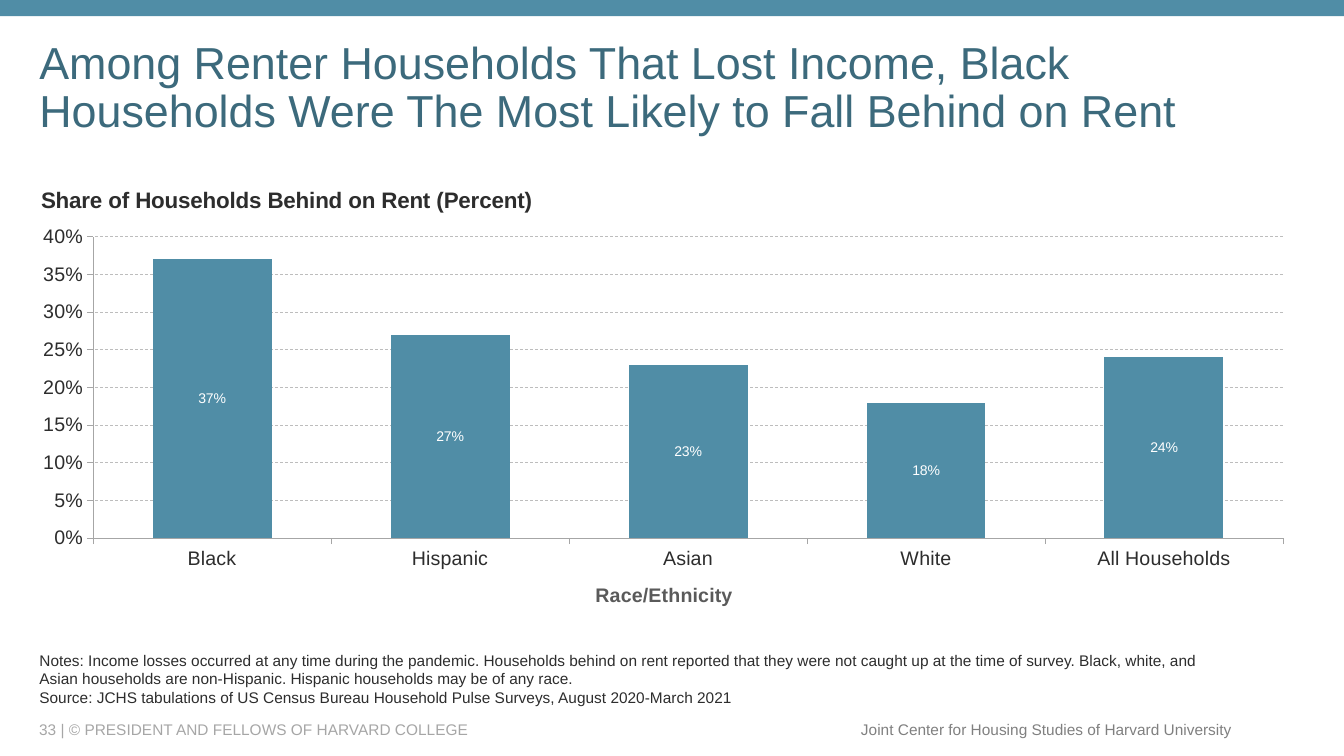
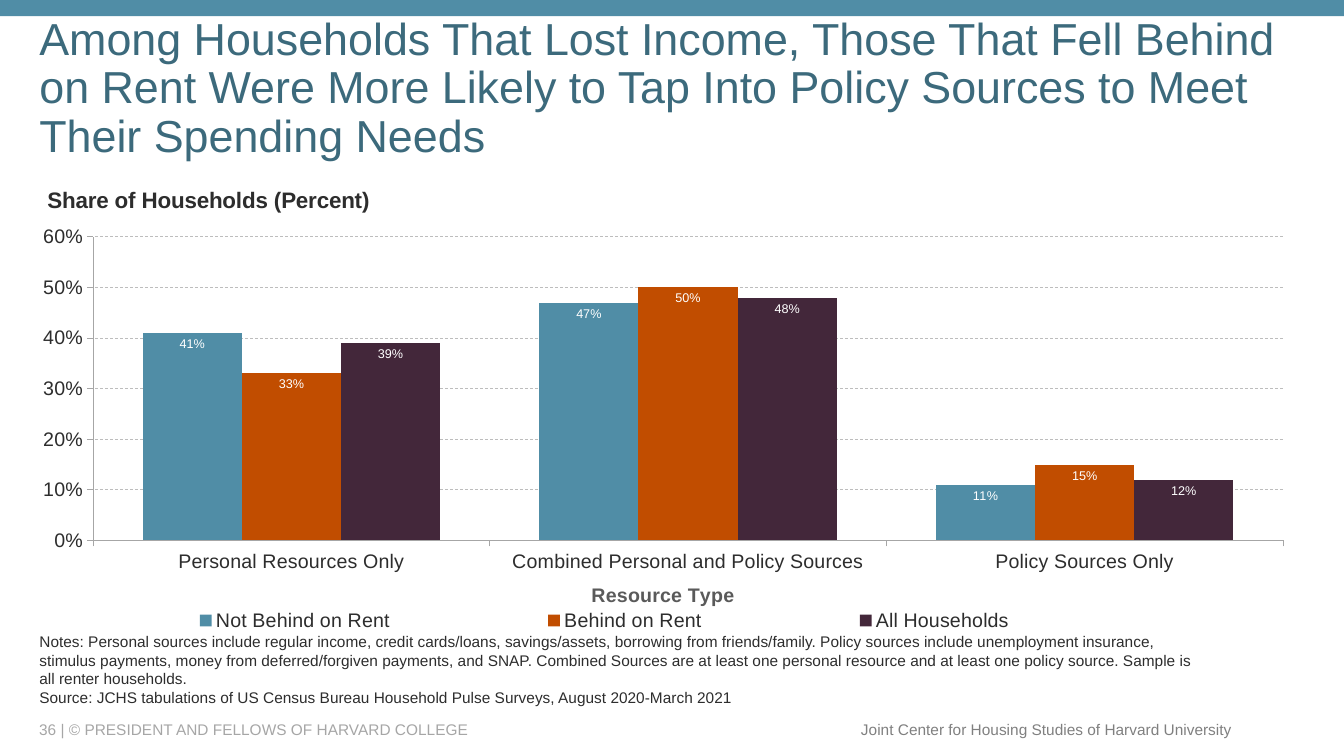
from lxml import etree
from pptx import Presentation
from pptx.chart.data import CategoryChartData
from pptx.dml.color import RGBColor
from pptx.enum.chart import XL_CHART_TYPE as CT, XL_LABEL_POSITION as LP
from pptx.enum.chart import XL_LEGEND_POSITION as LEG, XL_TICK_MARK as TICK
from pptx.enum.dml import MSO_LINE
from pptx.enum.shapes import MSO_SHAPE
from pptx.enum.text import MSO_ANCHOR as ANCHOR, MSO_AUTO_SIZE as AUTO, PP_ALIGN as ALIGN
from pptx.oxml.ns import qn
from pptx.util import Inches, Pt

TEAL = RGBColor(0x50, 0x8D, 0xA6)
ORANGE = RGBColor(0xC1, 0x4D, 0x00)
PLUM = RGBColor(0x43, 0x27, 0x3A)
TITLE_BLUE = RGBColor(0x3C, 0x6A, 0x7C)
INK = RGBColor(0x2D, 0x2D, 0x2D)
AXIS_TITLE = RGBColor(0x5A, 0x5A, 0x5A)
FOOTER_GREY = RGBColor(0x80, 0x80, 0x80)
LINE_GREY = RGBColor(0xA6, 0xA6, 0xA6)
GRID_GREY = RGBColor(0xBD, 0xBD, 0xBD)
WHITE = RGBColor(0xFF, 0xFF, 0xFF)

WIDTH, HEIGHT = Inches(13.33), Inches(7.5)
BAND = (0, 0, 100, 2.13)
TITLE = (2.18, 5.33, 94.9, 12.93)
CHART = (2.18, 22.93, 94.9, 61.33)
NOTES = (2.18, 86.4, 88.15, 7.73)
COPYRIGHT = (2.18, 95.07, 59.4, 2.67)
CENTER_NAME = (63.17, 94.53, 29.25, 3.87)

SOURCE = "Source: JCHS tabulations of US Census Bureau Household Pulse Surveys, August 2020-March 2021"

SLIDES = [
    dict(
        number=33,
        title="Among Renter Households That Lost Income, Black Households Were "
              "The Most Likely to Fall Behind on Rent",
        notes="Notes: Income losses occurred at any time during the pandemic. "
              "Households behind on rent reported that they were not caught up at the "
              "time of survey. Black, white, and Asian households are non-Hispanic. "
              "Hispanic households may be of any race.",
        heading="Share of Households Behind on Rent (Percent)",
        heading_at=(0.6, 1.9),
        axis="Race/Ethnicity",
        axis_at=(44.1, 87.4),
        cats=["Black", "Hispanic", "Asian", "White", "All Households"],
        series=[("Series 1", [0.37, 0.27, 0.23, 0.18, 0.24], TEAL)],
        top=0.4, step=0.05, plot_height=65,
        label_size=10, label_pos=LP.CENTER,
    ),
    dict(
        number=36,
        title="Among Households That Lost Income, Those That Fell Behind on Rent "
              "Were More Likely to Tap Into Policy Sources to Meet Their Spending Needs",
        notes="Notes: Personal sources include regular income, credit cards/loans, "
              "savings/assets, borrowing from friends/family. Policy sources include "
              "unemployment insurance, stimulus payments, money from deferred/forgiven "
              "payments, and SNAP. Combined Sources are at least one personal resource "
              "and at least one policy source. Sample is all renter households.",
        heading="Share of Households (Percent)",
        heading_at=(1.1, 1.9),
        axis="Resource Type",
        axis_at=(43.8, 87.4),
        cats=["Personal Resources Only", "Combined Personal and Policy Sources",
              "Policy Sources Only"],
        series=[("Not Behind on Rent", [0.41, 0.47, 0.11], TEAL),
                ("Behind on Rent", [0.33, 0.5, 0.15], ORANGE),
                ("All Households", [0.39, 0.48, 0.12], PLUM)],
        top=0.6, step=0.1, plot_height=65.5,
        label_size=9, label_pos=LP.INSIDE_END,
    ),
]


def apply(obj, **values):
    for name, value in values.items():
        setattr(obj, name, value)


def style(font, size, color, bold=False):
    apply(font, name="Arial", size=Pt(size), bold=bold)
    font.color.rgb = color


def emu(box):
    return [int(share * side / 100) for share, side in zip(box, (WIDTH, HEIGHT) * 2)]


def place(s, box):
    apply(s, **dict(zip(("left", "top", "width", "height"), emu(box))))


def write(s, lines, size, color, anchor=ANCHOR.MIDDLE, align=ALIGN.LEFT,
          spacing=1.0, wrap=True):
    tf = s.text_frame
    apply(tf, text="\n".join(lines), auto_size=AUTO.NONE, word_wrap=wrap,
          vertical_anchor=anchor)
    for p in tf.paragraphs:
        apply(p, alignment=align, line_spacing=spacing, space_before=Pt(0))
        for r in p.runs:
            style(r.font, size, color)
    return tf


def set_layout(parent, after, box, inner=False):
    for old in parent.findall(qn("c:layout")):
        parent.remove(old)
    layout = etree.Element(qn("c:layout"))
    manual = etree.SubElement(layout, qn("c:manualLayout"))
    values = [("layoutTarget", "inner")] if inner else []
    values += [("xMode", "edge"), ("yMode", "edge")]
    values += [(key, str(share / 100)) for key, share in zip("xywh", box)]
    for key, value in values:
        etree.SubElement(manual, qn("c:" + key)).set("val", value)
    parent.insert(0 if after is None else parent.index(parent.find(qn(after))) + 1, layout)


def set_chart_title(title, text, size, color, at):
    title.text_frame.text = text
    style(title.text_frame.paragraphs[0].runs[0].font, size, color, True)
    set_layout(title._element, "c:tx", at)


def add_band(slide, box):
    s = slide.shapes.add_shape(MSO_SHAPE.RECTANGLE, *emu(box))
    s.shadow.inherit = False
    s.fill.solid()
    s.fill.fore_color.rgb = TEAL
    s.line.fill.background()


def add_footer(slide, box, text, color, **options):
    write(slide.shapes.add_textbox(*emu(box)), [text], 11, color, **options)


def add_notes(slide, box, text):
    s = slide.placeholders[1]
    place(s, box)
    tf = write(s, [text, SOURCE], 11, INK, ANCHOR.BOTTOM)
    for p in tf.paragraphs:
        pPr = p._p.get_or_add_pPr()
        pPr.set("marL", "0")
        pPr.set("indent", "0")
        etree.SubElement(pPr, qn("a:buNone"))


def format_axis(axis):
    axis.major_tick_mark = TICK.OUTSIDE
    axis.minor_tick_mark = TICK.NONE
    style(axis.tick_labels.font, 14, INK)
    axis.format.line.color.rgb = LINE_GREY
    axis.format.line.width = Pt(0.5)


def add_columns(slide, box, d):
    data = CategoryChartData(number_format="0%")
    data.categories = d["cats"]
    for name, values, _ in d["series"]:
        data.add_series(name, values)
    chart = slide.shapes.add_chart(CT.COLUMN_CLUSTERED, *emu(box), data).chart
    style(chart.font, 10, AXIS_TITLE)
    set_chart_title(chart.chart_title, d["heading"], 16, INK, d["heading_at"])

    cat, val = chart.category_axis, chart.value_axis
    format_axis(cat)
    format_axis(val)
    cat.has_major_gridlines = False
    set_chart_title(cat.axis_title, d["axis"], 14, AXIS_TITLE, d["axis_at"])
    apply(val, minimum_scale=0, maximum_scale=d["top"], major_unit=d["step"],
          has_major_gridlines=True)
    apply(val.tick_labels, number_format="0%", number_format_is_linked=False)
    grid = val.major_gridlines.format.line
    grid.color.rgb = GRID_GREY
    apply(grid, width=Pt(0.5), dash_style=MSO_LINE.DASH)

    plot = chart.plots[0]
    apply(plot, gap_width=100, overlap=0, vary_by_categories=False)
    for series, (_, _, color) in zip(plot.series, d["series"]):
        series.format.fill.solid()
        series.format.fill.fore_color.rgb = color
        labels = series.data_labels
        apply(labels, show_value=True, position=d["label_pos"],
              number_format="0%", number_format_is_linked=False)
        style(labels.font, d["label_size"], WHITE)
    area = chart._chartSpace.find(".//" + qn("c:plotArea"))
    set_layout(area, None, (5, 13.7, 93.3, d["plot_height"]), True)

    chart.has_legend = len(d["series"]) > 1
    if chart.has_legend:
        legend = chart.legend
        apply(legend, position=LEG.BOTTOM, include_in_layout=False)
        style(legend.font, 14, INK)
        set_layout(legend._element, "c:legendPos", (1.5, 93.2, 87.2, 6.5))


def add_chart_slide(prs, d):
    slide = prs.slides.add_slide(prs.slide_layouts[1])
    add_band(slide, BAND)
    place(slide.shapes.title, TITLE)
    write(slide.shapes.title, [d["title"]], 32, TITLE_BLUE, spacing=0.9)
    add_columns(slide, CHART, d)
    add_notes(slide, NOTES, d["notes"])
    add_footer(slide, COPYRIGHT,
               f"{d['number']} | © PRESIDENT AND FELLOWS OF HARVARD COLLEGE", LINE_GREY)
    add_footer(slide, CENTER_NAME, "Joint Center for Housing Studies of Harvard University",
               FOOTER_GREY, align=ALIGN.RIGHT, wrap=False)


def main():
    prs = Presentation()
    apply(prs, slide_width=WIDTH, slide_height=HEIGHT)
    for d in SLIDES:
        add_chart_slide(prs, d)
    prs.save("out.pptx")


if __name__ == "__main__":
    main()
